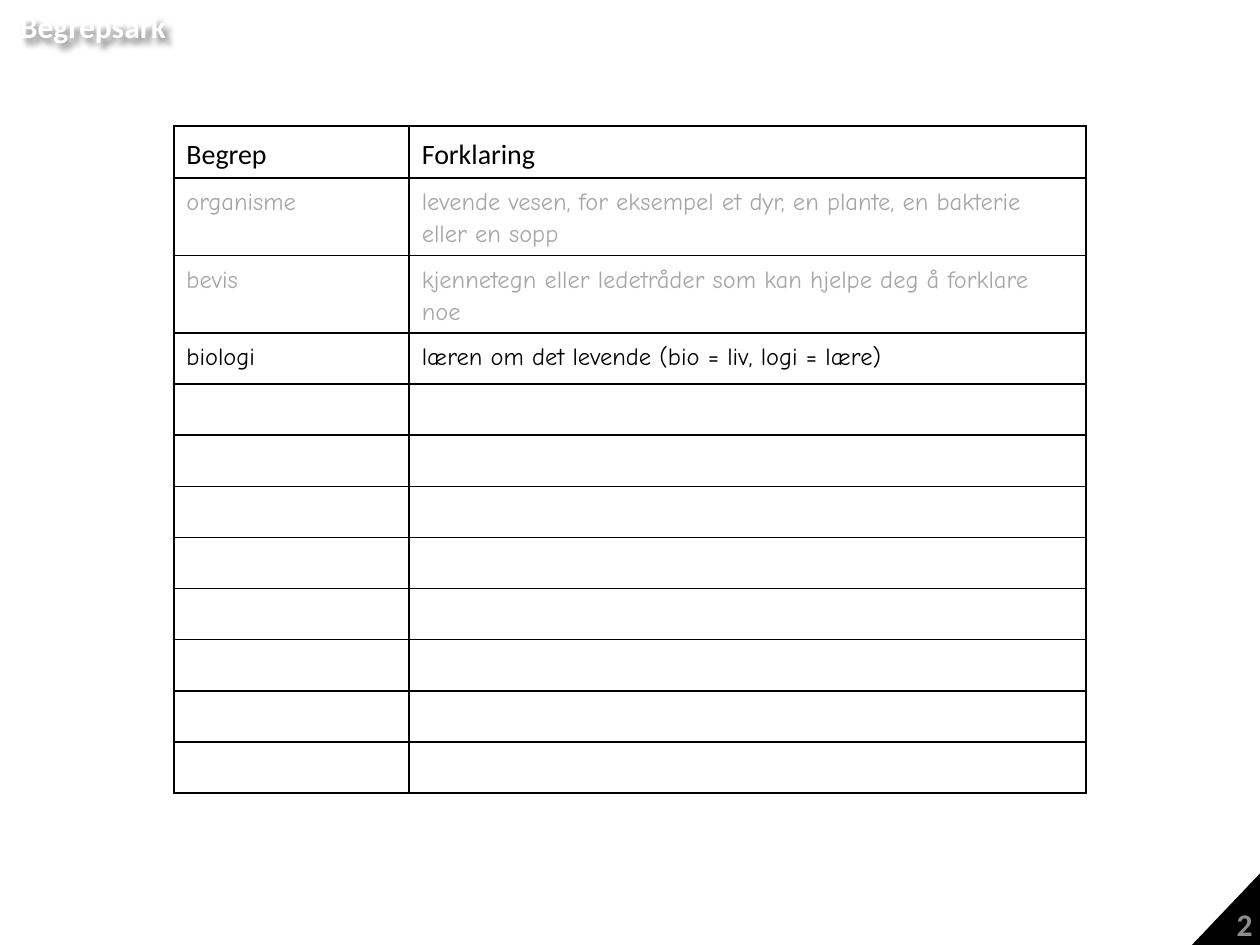
from lxml import etree
from pptx import Presentation, util as u
from pptx.dml.color import RGBColor
from pptx.enum import text as t
from pptx.oxml import ns, parse_xml

WIDTH, HEIGHT = 10, 7.5
COLORS = {"black": "000000", "white": "FFFFFF", "example": "A6A6A6", "number": "8C8C8C"}
HEADINGS = ("Begrep", "Forklaring")
TERMS = [
    ("organisme", "levende vesen, for eksempel et dyr, en plante, en bakterie  eller en sopp", "example"),
    ("bevis", "kjennetegn eller ledetråder som kan hjelpe deg å forklare noe", "example"),
    ("biologi", "læren om det levende (bio = liv, logi = lære)", "black"),
]
ROW_COUNT = 12
SHADOW = (
    f'<a:effectLst {ns.nsdecls("a")}>'
    '<a:outerShdw blurRad="50800" dist="50800" dir="2700000" algn="tl" rotWithShape="0">'
    f'<a:srgbClr val="{COLORS["black"]}"><a:alpha val="50000"/></a:srgbClr></a:outerShdw></a:effectLst>'
)


def color(name):
    return RGBColor.from_string(COLORS[name])


def write(frame, words, size=14, font="Comic Neue", ink="black", bold=False,
          align=None, spacing=None):
    paragraph = frame.paragraphs[0]
    paragraph.alignment = align
    paragraph.line_spacing = spacing
    run = paragraph.add_run()
    run.text = words
    run.font.size = u.Pt(size)
    run.font.name = font
    run.font.bold = bold
    run.font.color.rgb = color(ink)


class Sheet:
    heading = dict(size=16, font="Calibri", spacing=1.15)
    label = dict(size=18, font="Calibri", bold=True)

    def __init__(self, presentation):
        self.slide = presentation.slides.add_slide(presentation.slide_layouts[6])

    def box(self, left, top, width, height):
        return [u.Inches(share * side) for share, side in
                zip((left, top, width, height), (WIDTH, HEIGHT) * 2)]

    def title(self, words, *area):
        shape = self.slide.shapes.add_textbox(*self.box(*area))
        shape.fill.background()
        shape._element.spPr.append(parse_xml(SHADOW))
        frame = shape.text_frame
        frame.word_wrap = False
        frame.auto_size = t.MSO_AUTO_SIZE.SHAPE_TO_FIT_TEXT
        write(frame, words, ink="white", **self.label)

    def corner(self, words, *area):
        left, top, width, height = self.box(*area)
        right, bottom = left + width, top + height
        builder = self.slide.shapes.build_freeform(left, bottom)
        builder.add_line_segments([(right, top), (right, bottom)], close=True)
        shape = builder.convert_to_shape()
        shape.shadow.inherit = False
        shape.fill.solid()
        shape.fill.fore_color.rgb = color("black")
        shape.line.color.rgb = color("black")
        shape.line.width = u.Pt(2)
        shape.text_frame.vertical_anchor = t.MSO_ANCHOR.BOTTOM
        write(shape.text_frame, words, ink="number", align=t.PP_ALIGN.RIGHT, **self.label)

    def border(self, cell):
        properties = cell._tc.get_or_add_tcPr()
        for index, side in enumerate(("lnL", "lnR", "lnT", "lnB")):
            line = etree.Element(ns.qn(f"a:{side}"), w=str(u.Pt(1)))
            fill = etree.SubElement(line, ns.qn("a:solidFill"))
            etree.SubElement(fill, ns.qn("a:srgbClr"), val=COLORS["black"])
            properties.insert(index, line)

    def table(self, area, column_shares):
        left, top, width, height = self.box(*area)
        table = self.slide.shapes.add_table(
            ROW_COUNT, len(HEADINGS), left, top, width, height).table
        table.first_row = table.horz_banding = False
        for column, share in zip(table.columns, column_shares):
            column.width = int(width * share)
        for cell in table.iter_cells():
            cell.fill.background()
            self.border(cell)
        for cell, words in zip(table.rows[0].cells, HEADINGS):
            cell.vertical_anchor = t.MSO_ANCHOR.MIDDLE
            write(cell.text_frame, words, **self.heading)
        for row, (*entries, ink) in zip(list(table.rows)[1:], TERMS):
            for cell, words in zip(row.cells, entries):
                write(cell.text_frame, words, ink=ink, spacing=1.15)


def main():
    presentation = Presentation()
    presentation.slide_width = u.Inches(WIDTH)
    presentation.slide_height = u.Inches(HEIGHT)
    sheet = Sheet(presentation)
    sheet.corner("2", 0.945, 6.91 / HEIGHT, 0.059, 0.62 / HEIGHT)
    sheet.table((0.138, 1 / HEIGHT, 0.724, ROW_COUNT * 0.406 / HEIGHT), (0.258, 0.742))
    sheet.title("Begrepsark", 0.006, 0.01 / HEIGHT, 0.137, 0.4 / HEIGHT)
    presentation.save("out.pptx")


if __name__ == "__main__":
    main()
